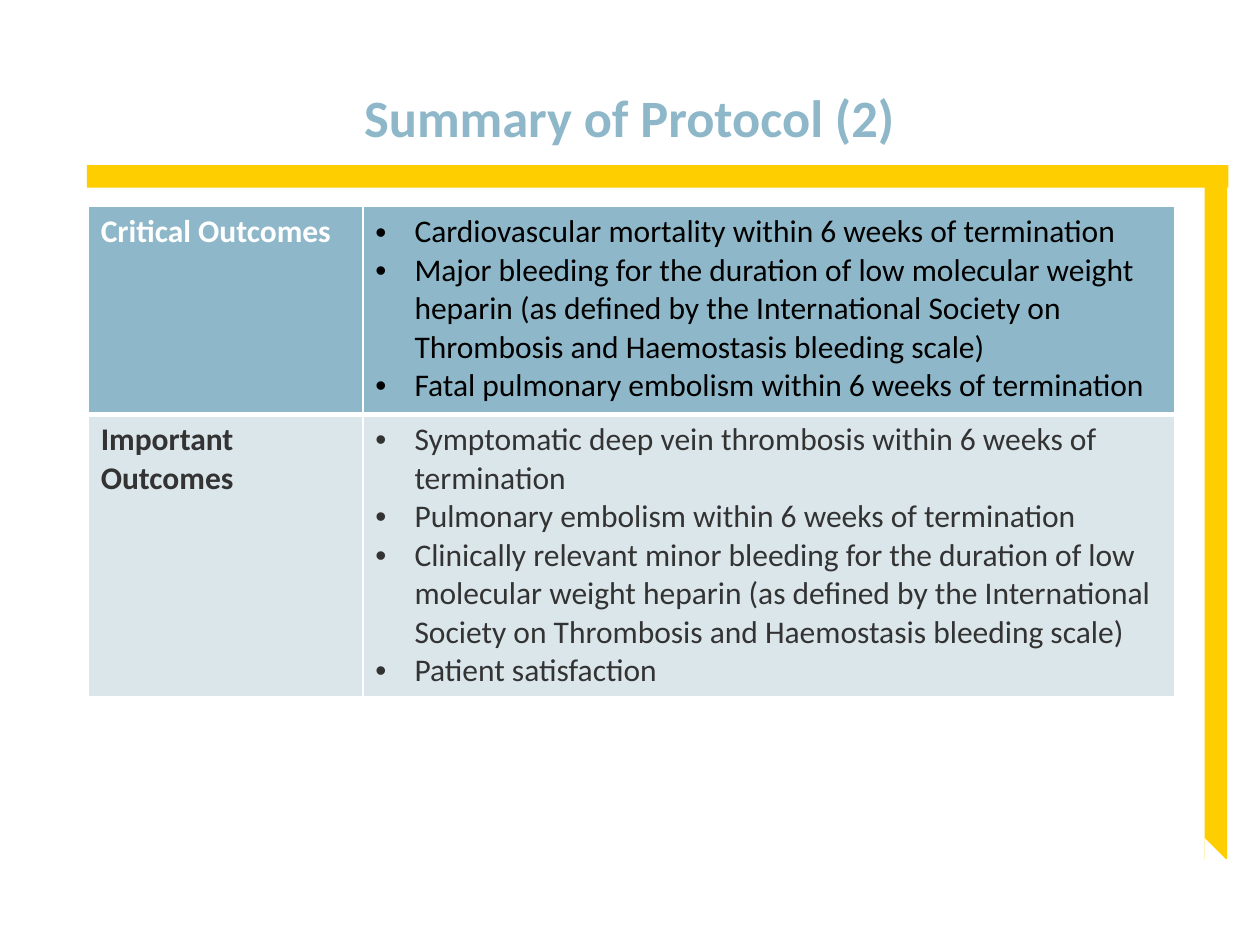
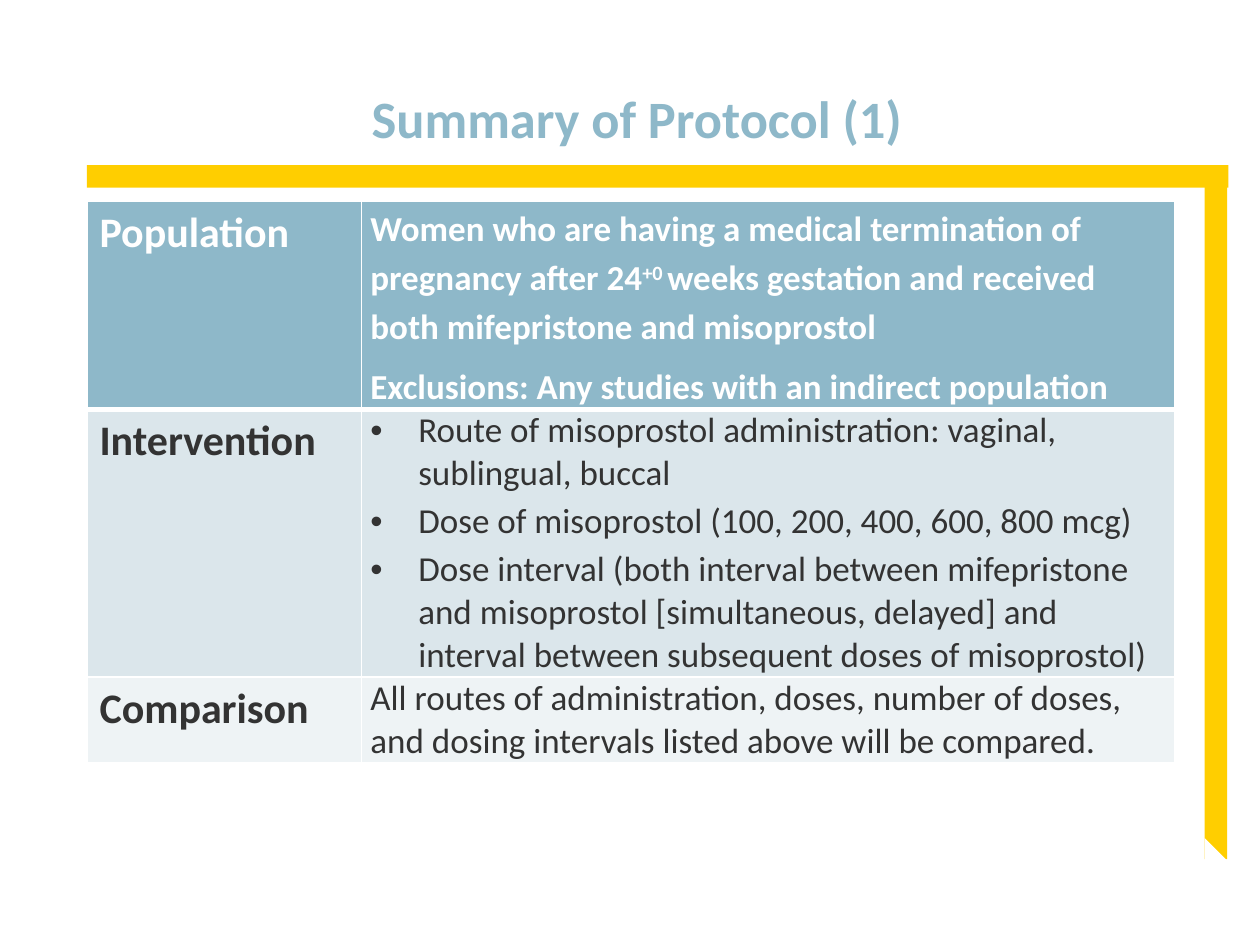
from pptx import Presentation
from pptx import util as u
from pptx.dml.color import RGBColor
from pptx.enum import shapes, text
from pptx.oxml import parse_xml
from pptx.oxml.ns import nsdecls

FONT = "Calibri"
BLUE, PALE, PALER = "8EB8C9", "DBE6EB", "EEF3F5"
YELLOW, WHITE, BLACK, GREY = "FFCE00", "FFFFFF", "000000", "333333"


def color(target, hex_value):
    if hasattr(target, "solid"):
        target.solid()
        target = target.fore_color
    else:
        target = target.color
    target.rgb = RGBColor.from_string(hex_value)


def add_run(p, words, size, hex_value, bold, raised=False):
    r = p.add_run()
    r.text = words
    r.font.name, r.font.size, r.font.bold = FONT, u.Pt(size), bold
    color(r.font, hex_value)
    if raised:
        r._r.get_or_add_rPr().set("baseline", "30000")


bands = [
    (shapes.MSO_SHAPE.RECTANGLE, 0.69, 1.31, 9.06, 0.18, YELLOW),
    (shapes.MSO_SHAPE.RECTANGLE, 9.56, 1.31, 0.18, 5.51, YELLOW),
    (shapes.MSO_SHAPE.ISOSCELES_TRIANGLE, 9.56, 6.65, 0.18, 0.18, WHITE),
]

slides = [
    dict(
        title="Summary of Protocol (2)", title_at=(2.53, 0.19, 7.17, 1.04),
        table_at=(0.7, 1.64), cols=(2.18, 6.44), label_size=18, size=18,
        indent=0.31, tight=False, before=0, after=0,
        rows=[
            dict(label="Critical Outcomes", height=1.65, fill=BLUE, label_color=WHITE,
                 color=BLACK, bold=False, bullets=True, spacing=None, paragraphs=[
                     ["Cardiovascular mortality within 6 weeks of termination"],
                     ["Major bleeding for the duration of low molecular weight heparin (as defined "
                      "by the International Society on Thrombosis and Haemostasis bleeding scale)"],
                     ["Fatal pulmonary embolism within 6 weeks of termination"]]),
            dict(label="Important Outcomes", height=2.2, fill=PALE, label_color=GREY,
                 color=GREY, bold=False, bullets=True, spacing=None, paragraphs=[
                     ["Symptomatic deep vein thrombosis within 6 weeks of termination"],
                     ["Pulmonary embolism within 6 weeks of termination"],
                     ["Clinically relevant minor bleeding for the duration of low molecular weight "
                      "heparin (as defined by the International Society on Thrombosis and "
                      "Haemostasis bleeding scale)"],
                     ["Patient satisfaction"]]),
        ]),
    dict(
        title="Summary of Protocol (1)", title_at=(2.59, 0.2, 7.11, 1.04),
        table_at=(0.69, 1.6), cols=(2.18, 6.45), label_size=24, size=20,
        indent=0.38, tight=True, before=2, after=1,
        rows=[
            dict(label="Population", height=1.63, fill=BLUE, label_color=WHITE,
                 color=WHITE, bold=True, bullets=False, spacing=1.15, paragraphs=[
                     ["Women who are having a medical termination of pregnancy after 24", "+0 ",
                      "weeks gestation and received both mifepristone and misoprostol"],
                     ["Exclusions: Any studies with an indirect population"]]),
            dict(label="Intervention", height=2.1, fill=PALE, label_color=GREY,
                 color=GREY, bold=False, bullets=True, spacing=None, paragraphs=[
                     ["Route of misoprostol administration: vaginal, sublingual, buccal"],
                     ["Dose of misoprostol (100, 200, 400, 600, 800 mcg)"],
                     ["Dose interval (both interval between mifepristone and misoprostol "
                      "[simultaneous, delayed] and interval between subsequent doses of "
                      "misoprostol)"]]),
            dict(label="Comparison", height=0.61, fill=PALER, label_color=GREY,
                 color=GREY, bold=False, bullets=False, spacing=None, paragraphs=[
                     ["All routes of administration, doses, number of doses, and dosing "
                      "intervals listed above will be compared."]]),
        ]),
]

prs = Presentation()
prs.slide_width, prs.slide_height = u.Inches(10), u.Inches(7.5)

for data in slides:
    s = prs.slides.add_slide(prs.slide_layouts[5])
    color(s.background.fill, WHITE)
    for kind, x, y, w, h, fill in bands:
        sp = s.shapes.add_shape(kind, u.Inches(x), u.Inches(y), u.Inches(w), u.Inches(h))
        sp.shadow.inherit = False
        color(sp.fill, fill)
        sp.line.fill.background()
        if kind == shapes.MSO_SHAPE.ISOSCELES_TRIANGLE:
            sp.adjustments[0] = 0

    title = s.shapes.title
    title.left, title.top, title.width, title.height = map(u.Inches, data["title_at"])
    tf = title.text_frame
    tf.word_wrap = True
    tf.auto_size = text.MSO_AUTO_SIZE.NONE
    tf.vertical_anchor = text.MSO_ANCHOR.BOTTOM
    p = tf.paragraphs[0]
    p.alignment = text.PP_ALIGN.LEFT
    p.line_spacing = 0.9
    p._p.get_or_add_pPr().set("marL", str(u.Inches(0.26)))
    add_run(p, data["title"], 30, BLUE, True)

    rows = data["rows"]
    x, y = data["table_at"]
    table = s.shapes.add_table(
        len(rows), 2, u.Inches(x), u.Inches(y), u.Inches(sum(data["cols"])),
        u.Inches(sum(row["height"] for row in rows))).table
    table.first_row = table.horz_banding = False
    for column, width in zip(table.columns, data["cols"]):
        column.width = u.Inches(width)

    for i, row in enumerate(rows):
        table.rows[i].height = u.Inches(row["height"])
        label, body = table.cell(i, 0), table.cell(i, 1)
        for cell in (label, body):
            for side in "LRTB":
                heavy = (i == 0 and side == "B") or (i == 1 and side == "T")
                cell._tc.get_or_add_tcPr().append(parse_xml(
                    f'<a:ln{side} {nsdecls("a")} w="{u.Pt(3 if heavy else 1)}"><a:solidFill>'
                    f'<a:srgbClr val="{WHITE}"/></a:solidFill></a:ln{side}>'))
            color(cell.fill, row["fill"])
        add_run(label.text_frame.paragraphs[0], row["label"], data["label_size"],
                row["label_color"], True)

        if data["tight"]:
            body.margin_left = body.margin_right = u.Inches(0.07)
            body.margin_top = body.margin_bottom = 0
        tf = body.text_frame
        for j, runs in enumerate(row["paragraphs"]):
            p = tf.add_paragraph() if j else tf.paragraphs[0]
            if row["bullets"]:
                pPr = p._p.get_or_add_pPr()
                pPr.set("marL", str(u.Inches(data["indent"])))
                pPr.set("indent", str(-u.Inches(data["indent"])))
                pPr.append(parse_xml(f'<a:buFont {nsdecls("a")} typeface="Arial"/>'))
                pPr.append(parse_xml(f'<a:buChar {nsdecls("a")} char="•"/>'))
            if row["spacing"]:
                p.line_spacing = row["spacing"]
                p.space_after = u.Pt(6)
            else:
                p.space_before = u.Pt(data["before"] if j else 0)
                p.space_after = u.Pt(data["after"])
            for words in runs:
                add_run(p, words, data["size"], row["color"], row["bold"], words == "+0 ")

prs.save("out.pptx")
